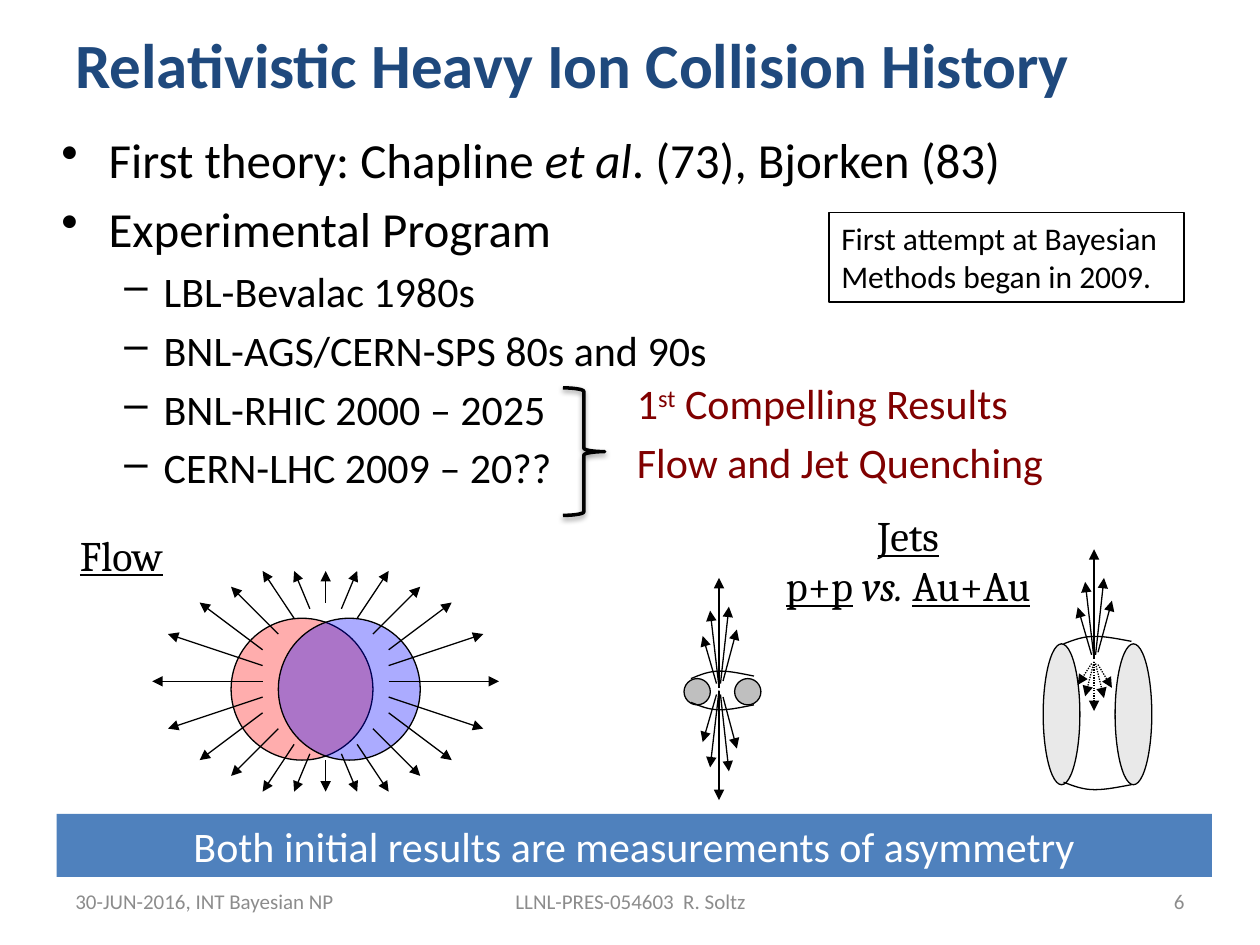
"""Build the collision history slide."""
from dataclasses import dataclass

from lxml import etree
from pptx import Presentation
from pptx import util as u
from pptx.dml.color import RGBColor
from pptx.enum import dml, shapes, text
from pptx.oxml.ns import qn


@dataclass(frozen=True)
class Theme:
    """Fonts, colours and sizes of the slide."""
    sans: str = "Calibri"
    serif: str = "Cambria"
    ink: str = "000000"
    title: str = "1F497D"
    accent: str = "800000"
    banner: str = "4F81BD"
    white: str = "FFFFFF"
    muted: str = "8C8C8C"
    red: str = "FF0000"
    blue: str = "0000FF"
    grey: str = "BFBFBF"
    title_pt: int = 36
    h1_pt: int = 28
    h2_pt: int = 24
    note_pt: int = 18
    foot_pt: int = 12
    line_pt: float = 0.75


T = Theme()
SHAPE = shapes.MSO_SHAPE
LEFT, CENTER, RIGHT = text.PP_ALIGN.LEFT, text.PP_ALIGN.CENTER, text.PP_ALIGN.RIGHT
TOP, MIDDLE = text.MSO_ANCHOR.TOP, text.MSO_ANCHOR.MIDDLE
FLOW_QUADRANT = [((0, 5), (0, 7)), ((1, 4.6), (2, 7)), ((2, 4), (4, 7)), ((3, 3), (6, 6)),
                 ((4, 2), (8, 5)), ((4, 1), (10, 3)), ((4, 0), (11, 0))]
JET = [((-0.05, 0.08), (-0.33, 1.04)), ((0, 0), (0, 2.21)), ((0, 0), (-0.18, 1.55)),
       ((0.03, 0.08), (0.2, 1.63)), ((0.08, 0.13), (0.36, 1.17))]
ARC = [[(1, 0.67), (0.8, 0.33), (0.63, 0), (0.46, 0)],
       [(0.46, 0), (0.28, 0), (0.15, 0.5), (0, 1)]]


def cm(*values):
    """Turn numbers into lengths."""
    return [u.Cm(v) for v in values]


def add_xml(parent, tag, **attrs):
    """Append a drawing element with attributes."""
    el = etree.SubElement(parent, qn(tag))
    for key, value in attrs.items():
        el.set(key, str(value))
    return el


def style_runs(p, runs, size, color, font=T.sans):
    """Add (text, options) runs to a paragraph."""
    for words, opts in runs:
        r = p.add_run()
        r.text = words
        f = r.font
        f.name, f.size = font, u.Pt(size)
        f.color.rgb = RGBColor.from_string(color)
        f.bold, f.italic, f.underline = (opts.get(k, False) for k in ("bold", "italic", "underline"))
        if "baseline" in opts:
            f._element.set("baseline", str(opts["baseline"]))


def write(sp, lines, size, color, font=T.sans, align=LEFT, anchor=TOP, wrap=True):
    """Fill a shape with lines of runs."""
    tf = sp.text_frame
    tf.word_wrap, tf.vertical_anchor = wrap, anchor
    for i, runs in enumerate(lines):
        p = tf.add_paragraph() if i else tf.paragraphs[0]
        p.alignment = align
        style_runs(p, runs, size, color, font)
    return tf


def text_box(s, box, lines, size, color, **options):
    """Place a text box."""
    return write(s.shapes.add_textbox(*cm(*box)), lines, size, color, **options)


def outline(sp, width=T.line_pt):
    """Give a shape or line the ink outline."""
    sp.line.color.rgb = RGBColor.from_string(T.ink)
    sp.line.width = u.Pt(width)


def add_shape(parent, kind, box, fill=None, alpha=None, line=T.line_pt):
    """Place a preset shape without a shadow."""
    sp = parent.shapes.add_shape(kind, *cm(*box))
    sp.shadow.inherit = False
    if fill:
        sp.fill.solid()
        sp.fill.fore_color.rgb = RGBColor.from_string(fill)
    else:
        sp.fill.background()
    if alpha:
        add_xml(sp._element.spPr.find(".//" + qn("a:srgbClr")), "a:alpha", val=alpha * 1000)
    if line:
        outline(sp, line)
    else:
        sp.line.fill.background()
    return sp


def arrow(parent, start, end, dash=None):
    """Draw a thin arrow."""
    c = parent.shapes.add_connector(shapes.MSO_CONNECTOR.STRAIGHT, *cm(*start, *end))
    outline(c)
    if dash:
        c.line.dash_style = dash
    add_xml(c.line._get_or_add_ln(), "a:tailEnd", type="triangle")
    add_xml(c._element.spPr, "a:effectLst")


def arc(s, box, flip=False):
    """Draw the curve that links two nuclei."""
    x, y, w, h = box
    points = []
    for curve in ARC:
        for i in range(9):
            t = i / 8
            weights = ((1 - t) ** 3, 3 * t * (1 - t) ** 2, 3 * t * t * (1 - t), t ** 3)
            px, py = (sum(k * q[axis] for k, q in zip(weights, curve)) for axis in (0, 1))
            points.append(cm(x + px * w, y + (1 - py if flip else py) * h))
    builder = s.shapes.build_freeform(*points[0])
    builder.add_line_segments(points[1:], close=False)
    sp = builder.convert_to_shape()
    sp.shadow.inherit = False
    sp.fill.background()
    outline(sp)


def bullets(s, box):
    """Write the bulleted outline."""
    rows = [(0, [("First theory: Chapline ", {}), ("et al", {"italic": True}),
                 (". (73), Bjorken (83)", {})]),
            (0, [("Experimental Program", {})]),
            (1, [("LBL-Bevalac 1980s", {})]),
            (1, [("BNL-AGS/CERN-SPS 80s and 90s", {})]),
            (1, [("BNL-RHIC 2000 – 2025", {})]),
            (1, [("CERN-LHC 2009 – 20??", {})])]
    levels = [("•", T.h1_pt, 0.95, 0.95), ("–", T.h2_pt, 2.06, 0.79)]
    tf = text_box(s, box, [], T.h1_pt, T.ink)
    for i, (level, runs) in enumerate(rows):
        mark, size, margin, hang = levels[level]
        p = tf.add_paragraph() if i else tf.paragraphs[0]
        p.level = level
        style_runs(p, runs, size, T.ink)
        space_before(p)
        pr = p._p.get_or_add_pPr()
        pr.set("marL", str(u.Cm(margin)))
        pr.set("indent", str(-u.Cm(hang)))
        add_xml(pr, "a:buChar", char=mark)


def space_before(p):
    """Set a fifth of a line before a paragraph."""
    add_xml(add_xml(p._p.get_or_add_pPr(), "a:spcBef"), "a:spcPct", val=20000)


def results(s, box):
    """Draw the brace and the results it points to."""
    x, y, w, h = box
    brace = add_shape(s, SHAPE.RIGHT_BRACE, (x, y, 0.84, h), line=2)
    shadow = add_xml(brace._element.spPr.find(qn("a:effectLst")), "a:outerShdw", blurRad=40000,
                     dist=20000, dir=5400000, rotWithShape=0)
    add_xml(add_xml(shadow, "a:srgbClr", val=T.ink), "a:alpha", val=38000)
    lines = [[("1", {}), ("st", {"baseline": 30000}), (" Compelling Results", {})],
             [("Flow and Jet Quenching", {})]]
    tf = text_box(s, (x + 1.24, y - 0.2, w - 1.24, h), lines, T.h2_pt, T.accent)
    tf.margin_top = 0
    space_before(tf.paragraphs[1])


def flow(s, box):
    """Draw two overlapping nuclei with arrows all around."""
    x, y, w, h = box
    unit = w / 22
    cx, cy = x + w / 2, y + h / 2
    group = s.shapes.add_group_shape()
    for left, color, alpha in ((-6, T.red, 32), (-3, T.blue, 33)):
        add_shape(group, SHAPE.OVAL, (cx + left * unit, cy - 4 * unit, 9 * unit, 9 * unit), color, alpha)
    for ends in FLOW_QUADRANT:
        spokes = {tuple((a * sx, b * sy) for a, b in ends) for sx in (1, -1) for sy in (1, -1)}
        for spoke in sorted(spokes):
            arrow(group, *((cx + a * unit, cy + b * unit) for a, b in spoke))


def jet(s, x, y, scale, dash=None):
    """Draw a spray of arrows, upward when the scale is negative."""
    group = s.shapes.add_group_shape()
    for ends in JET:
        arrow(group, *((x + a, y + b * scale) for a, b in ends), dash=dash)


def collision(s, box, nucleus, arc_w, jet_y, alpha=None, quench=1, dash=None):
    """Draw two nuclei, their linking curves and a pair of jets."""
    x, y, w, h = box
    for left in (x, x + w - nucleus):
        add_shape(s, SHAPE.OVAL, (left, y, nucleus, h), T.grey, alpha)
    arc_x = x + (w - arc_w) / 2
    arc(s, (arc_x, y - 0.15, arc_w, 0.15))
    arc(s, (arc_x, y + h - 0.05, arc_w, 0.15), flip=True)
    jet_x = x + w / 2 - 0.07
    jet(s, jet_x, y + jet_y, -1)
    jet(s, jet_x, y + jet_y + 0.06, quench, dash)


def labels(s):
    """Write the headings of the two drawings."""
    line = {"underline": True}
    jets = [[("Jets", line)],
            [("p+p", line), (" ", {}), ("vs. ", {"italic": True}), ("Au+Au", line)]]
    for box, lines in (((15.44, 10.13, 5.74, 2.31), jets), ((1.3, 10.54, 2.29, 1.27), [[("Flow", line)]])):
        text_box(s, box, lines, T.h2_pt, T.ink, font=T.serif, align=CENTER, anchor=MIDDLE, wrap=False)


def footer(s, y, h):
    """Write the date, source and page number."""
    for x, w, words, align in ((1.27, 5.92, "30-JUN-2016, INT Bayesian NP", LEFT),
                               (8.69, 8.05, "LLNL-PRES-054603  R. Soltz", CENTER),
                               (18.21, 5.92, "6", RIGHT)):
        text_box(s, (x, y, w, h), [[(words, {})]], T.foot_pt, T.muted, align=align, anchor=MIDDLE)


def main():
    """Build and save the slide."""
    prs = Presentation()
    prs.slide_width, prs.slide_height = cm(25.4, 19.05)
    s = prs.slides.add_slide(prs.slide_layouts[6])
    text_box(s, (1.27, 0.46, 22.86, 1.63), [[("Relativistic Heavy Ion Collision History", {"bold": True})]],
             T.title_pt, T.title, anchor=MIDDLE)
    bullets(s, (0.99, 2.49, 23.57, 13.89))
    footer(s, 17.65, 1.02)
    flow(s, (3.07, 11.51, 6.99, 4.45))
    labels(s)
    collision(s, (21.03, 12.98, 2.19, 2.84), 0.74, 1.37, 0.3, 33, 0.45, dml.MSO_LINE.ROUND_DOT)
    collision(s, (13.79, 13.68, 1.55, 0.53), 0.53, 1.27, 0.18)
    results(s, (11.35, 7.82, 11.5, 2.57))
    banner = add_shape(s, SHAPE.RECTANGLE, (1.14, 16.41, 23.29, 1.27), T.banner, line=None)
    write(banner, [[("Both initial results are measurements of asymmetry", {})]], T.h2_pt, T.white, align=CENTER)
    note = add_shape(s, SHAPE.RECTANGLE, (16.71, 4.29, 7.16, 1.8))
    write(note, [[("First attempt at Bayesian Methods began in 2009.", {})]], T.note_pt, T.ink)
    prs.save("out.pptx")


if __name__ == "__main__":
    main()
